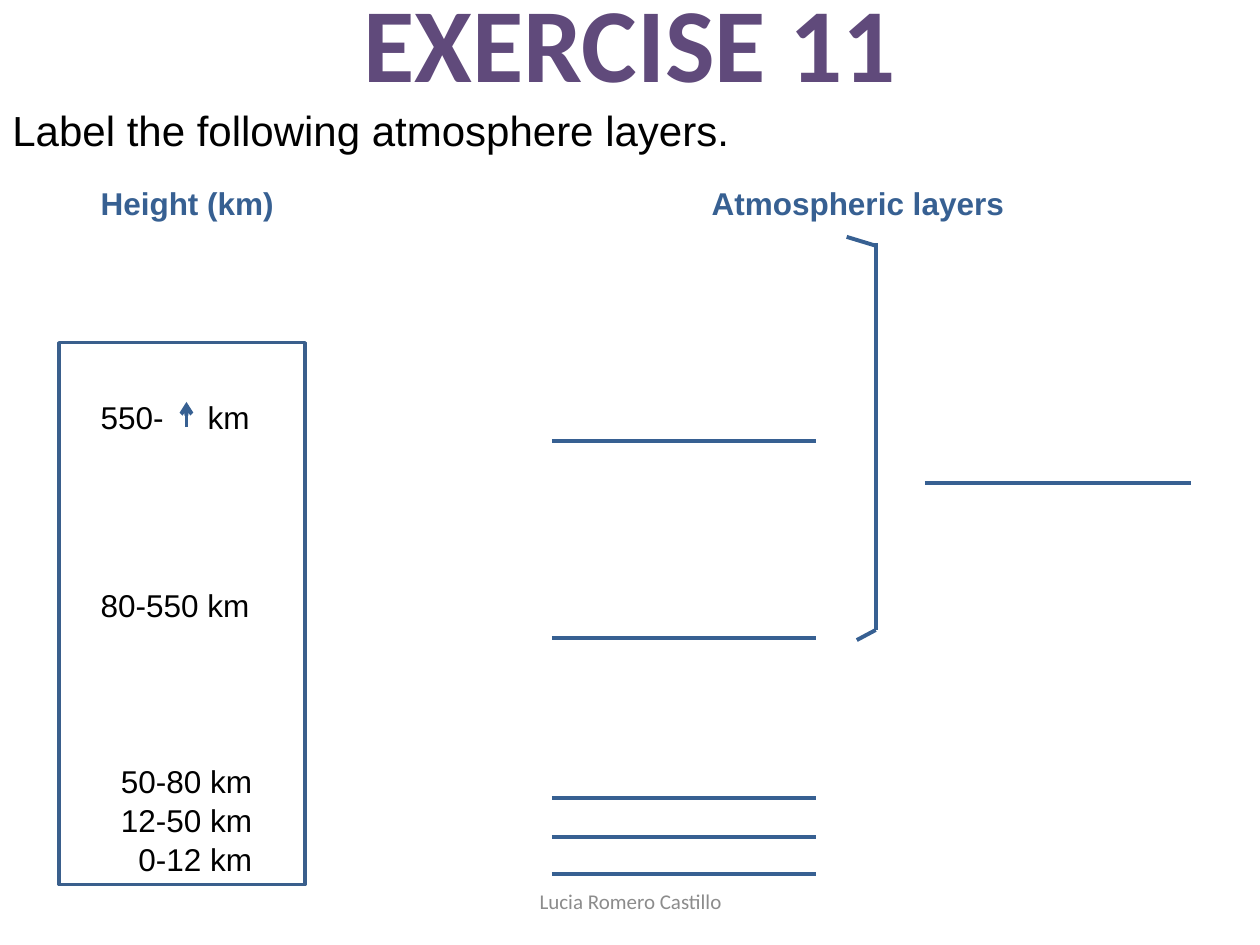
from dataclasses import dataclass

from lxml.etree import SubElement
from pptx import Presentation
from pptx.dml.color import RGBColor
from pptx.enum.shapes import MSO_CONNECTOR, MSO_SHAPE
from pptx.enum.text import MSO_ANCHOR, MSO_AUTO_SIZE, PP_ALIGN
from pptx.oxml.ns import qn
from pptx.util import Inches, Pt

BLUE, BLACK = "376092", "000000"


@dataclass
class Label:
    text: str
    left: float
    top: float
    width: float
    height: float = 0.4
    size: float = 18
    color: str = BLACK
    bold: bool = False
    font: str = "Arial"
    align: PP_ALIGN = PP_ALIGN.LEFT
    anchor: MSO_ANCHOR = MSO_ANCHOR.TOP
    wrap: bool = True
    tab: float = 0


@dataclass
class Line:
    x1: float
    y1: float
    x2: float
    y2: float
    arrow: bool = False


def rgb(color: str) -> RGBColor:
    return RGBColor.from_string(color)


def draw_label(slide, label: Label) -> None:
    box = slide.shapes.add_textbox(Inches(label.left), Inches(label.top),
                                   Inches(label.width), Inches(label.height))
    frame = box.text_frame
    frame.word_wrap = label.wrap
    frame.auto_size = MSO_AUTO_SIZE.SHAPE_TO_FIT_TEXT
    frame.vertical_anchor = label.anchor
    paragraph = frame.paragraphs[0]
    paragraph.alignment = label.align
    if label.tab:
        stops = SubElement(paragraph._p.get_or_add_pPr(), qn("a:tabLst"))
        SubElement(stops, qn("a:tab"), pos=str(Inches(label.tab)), algn="l")
    run = paragraph.add_run()
    run.text = label.text
    run.font.name = label.font
    run.font.size = Pt(label.size)
    run.font.bold = label.bold
    run.font.color.rgb = rgb(label.color)


def draw_line(slide, line: Line) -> None:
    connector = slide.shapes.add_connector(
        MSO_CONNECTOR.STRAIGHT, Inches(line.x1), Inches(line.y1),
        Inches(line.x2), Inches(line.y2))
    connector.line.color.rgb = rgb(BLUE)
    connector.line.width = Pt(2.25)
    if line.arrow:
        SubElement(connector.line._get_or_add_ln(), qn("a:tailEnd"), type="arrow")
    SubElement(connector._element.spPr, qn("a:effectLst"))


def draw_height_column(slide) -> None:
    column = slide.shapes.add_shape(MSO_SHAPE.RECTANGLE, Inches(0.47),
                                    Inches(2.72), Inches(1.95), Inches(4.3))
    column.shadow.inherit = False
    column.fill.solid()
    column.fill.fore_color.rgb = rgb("FFFFFF")
    column.line.color.rgb = rgb("3A5F8C")
    column.line.width = Pt(2)


def main() -> None:
    prs = Presentation()
    prs.slide_width, prs.slide_height = Inches(10), Inches(7.5)
    slide = prs.slides.add_slide(prs.slide_layouts[6])

    # Title, task and column headings
    for heading in (
        Label("EXERCISE 11", 0, -0.23, 10, 1.11, 60, "604A7B", True,
              "Calibri", PP_ALIGN.CENTER),
        Label("Label the following atmosphere layers.", 0, 0.78, 5.95, 0.51,
              24, wrap=False),
        Label("Atmospheric layers", 5.55, 1.41, 2.73, color=BLUE, bold=True),
        Label("Height (km)", 0.7, 1.41, 1.72, color=BLUE, bold=True),
    ):
        draw_label(slide, heading)

    # Answer lines, one per layer and one for the bracketed group
    for y in (3.5, 5.06, 6.33, 6.64, 6.94):
        draw_line(slide, Line(4.38, y, 6.48, y))
    draw_line(slide, Line(7.34, 3.83, 9.45, 3.83))

    # Height column; the tab leaves room for the upward arrow
    draw_height_column(slide)
    draw_label(slide, Label("550-\tkm", 0.7, 3.11, 1.56, tab=0.85))
    draw_label(slide, Label("80-550 km", 0.7, 4.6, 1.56))
    for row, height in enumerate(("50-80 km", "12-50 km", "0-12 km")):
        draw_label(slide, Label(height, 0.7, 6 + row * 0.31, 1.4,
                                align=PP_ALIGN.RIGHT))
    draw_line(slide, Line(1.48, 3.39, 1.48, 3.19, arrow=True))

    # Bracket around the two upper layers
    for side in (Line(6.95, 1.93, 6.95, 5), Line(6.95, 1.95, 6.72, 1.88),
                 Line(6.95, 5, 6.8, 5.08)):
        draw_line(slide, side)

    # Footer
    draw_label(slide, Label("Lucia Romero Castillo", 3.42, 6.95, 3.17, size=12,
                            color="8C8C8C", font="Calibri",
                            align=PP_ALIGN.CENTER, anchor=MSO_ANCHOR.MIDDLE))

    prs.save("out.pptx")


if __name__ == "__main__":
    main()
